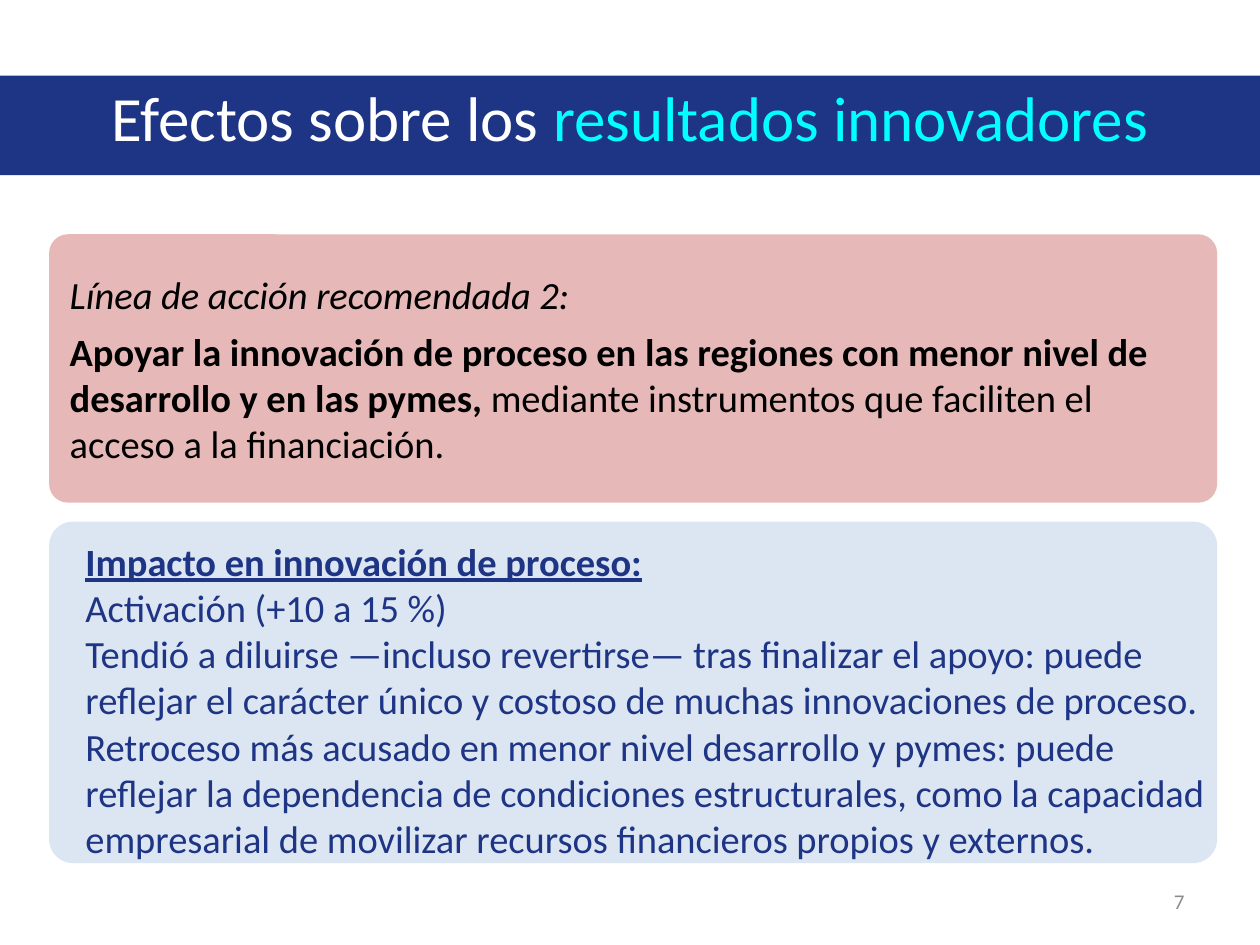
from pptx import Presentation
from pptx.dml.color import RGBColor as Rgb
from pptx.enum.shapes import MSO_SHAPE as Shape
from pptx.enum.text import MSO_ANCHOR as Anchor, MSO_AUTO_SIZE as Fit, PP_ALIGN as Align
from pptx.util import Inches, Pt

HUES = {"navy": "1E3485", "cyan": "00FFFF", "white": "FFFFFF", "black": "000000",
        "gray": "8C8C8C", "rose": "E6B9B8", "sky": "DCE6F2"}

deck = Presentation()
deck.slide_width, deck.slide_height = Inches(10), Inches(7.5)
slide = deck.slides.add_slide(deck.slide_layouts[5])
shapes = slide.shapes


def add_block(kind, hue, *place):
    block = shapes.add_shape(kind, *map(Inches, place))
    block.shadow.inherit = False
    block.fill.solid()
    block.fill.fore_color.rgb = Rgb.from_string(HUES[hue])
    block.line.fill.background()
    return block


def add_run(para, text, size, hue, bold=False, italic=False, under=False):
    run = para.add_run()
    run.text = text
    font = run.font
    font.name, font.size = "Calibri", Pt(size)
    font.bold, font.italic, font.underline = bold, italic, under
    font.color.rgb = Rgb.from_string(HUES[hue])


# Title over the full-width band
title = shapes.title
band = add_block(Shape.RECTANGLE, "navy", 0, 0.6, 10, 0.79)
title.element.addprevious(band.element)
title.left, title.top, title.width, title.height = map(Inches, (0.5, 0.3, 9, 1.25))
frame = title.text_frame
frame.auto_size = Fit.NONE
frame.vertical_anchor = Anchor.MIDDLE
para = frame.paragraphs[0]
para.alignment = Align.CENTER
add_run(para, "Efectos sobre los ", 36, "white")
add_run(para, "resultados innovadores", 36, "cyan")

# Two rounded cards
left, wide = 0.39, 9.27
advice = add_block(Shape.ROUNDED_RECTANGLE, "rose", left, 1.86, wide, 2.13)
impact = add_block(Shape.ROUNDED_RECTANGLE, "sky", left, 4.14, wide, 2.71)
for card in (advice, impact):
    card.adjustments[0] = 0.07

# Recommended action
frame = advice.text_frame
frame.word_wrap = True
frame.vertical_anchor = Anchor.MIDDLE
frame.margin_left, frame.margin_right = Inches(0.16), Inches(0.1)
frame.margin_top = frame.margin_bottom = Inches(0.08)
frame.margin_left = Inches(0.12)
para = frame.paragraphs[0]
para.alignment = Align.LEFT
add_run(para, "Línea de acción recomendada 2:", 22, "black", italic=True)
para = frame.add_paragraph()
para.alignment = Align.LEFT
para.space_before = Pt(6)
add_run(para, "Apoyar la innovación de proceso en las regiones con menor nivel de "
        "desarrollo y en las pymes, ", 22, "black", bold=True)
add_run(para, "mediante instrumentos que faciliten el acceso a la financiación.", 22, "black")

# Impact on process innovation
frame = shapes.add_textbox(*map(Inches, (0.58, 4.22, 9.14, 2.69))).text_frame
frame.word_wrap = True
frame.auto_size = Fit.SHAPE_TO_FIT_TEXT
add_run(frame.paragraphs[0], "Impacto en innovación de proceso:", 22, "navy",
        bold=True, under=True)
points = [
    ("Activación (+10 a 15 %)", Align.JUSTIFY),
    ("Tendió a diluirse —incluso revertirse— tras finalizar el apoyo: puede reflejar "
     "el carácter único y costoso de muchas innovaciones de proceso.", Align.LEFT),
    ("Retroceso más acusado en menor nivel desarrollo y pymes: puede reflejar la "
     "dependencia de condiciones estructurales, como la capacidad empresarial de "
     "movilizar recursos financieros propios y externos.", Align.LEFT),
]
for text, align in points:
    para = frame.add_paragraph()
    para.alignment = align
    add_run(para, text, 22, "navy")

# Page number
frame = shapes.add_textbox(*map(Inches, (7.17, 6.95, 2.33, 0.4))).text_frame
frame.word_wrap = True
frame.vertical_anchor = Anchor.MIDDLE
para = frame.paragraphs[0]
para.alignment = Align.RIGHT
add_run(para, "7", 12, "gray")

deck.save("out.pptx")
